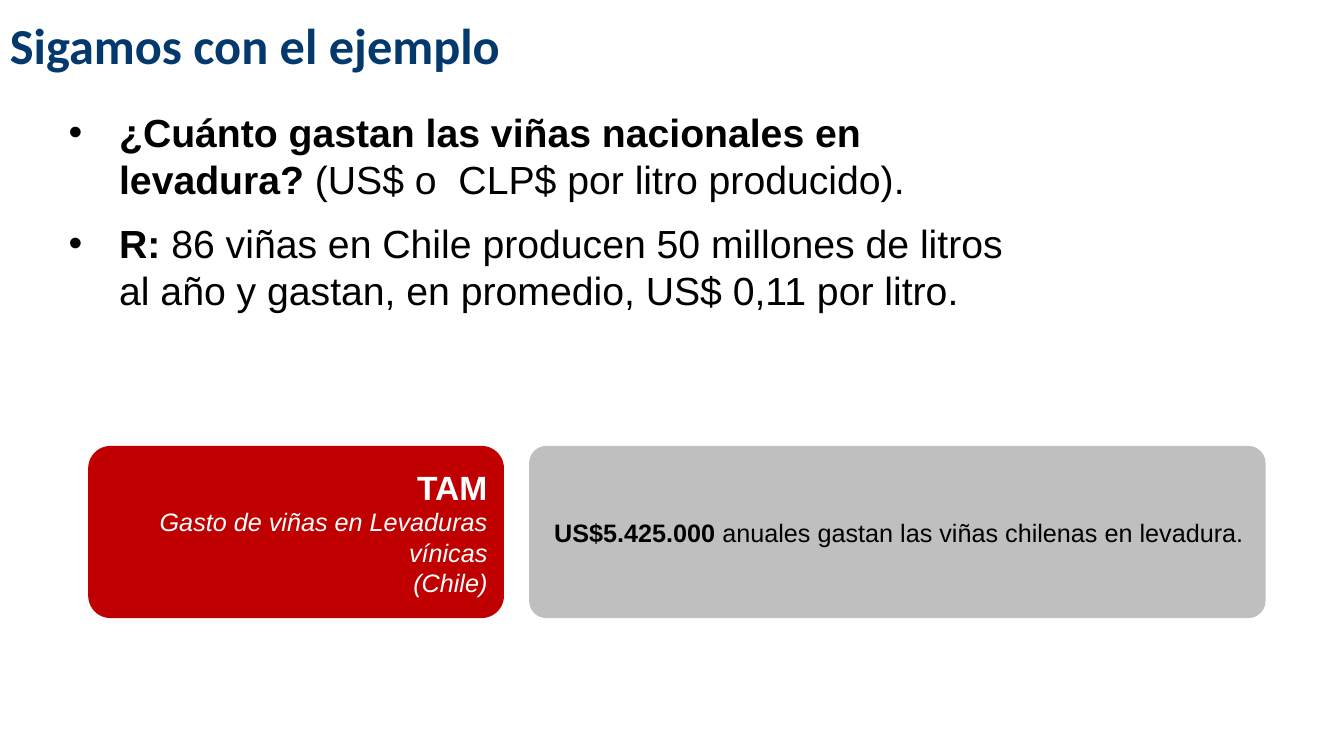
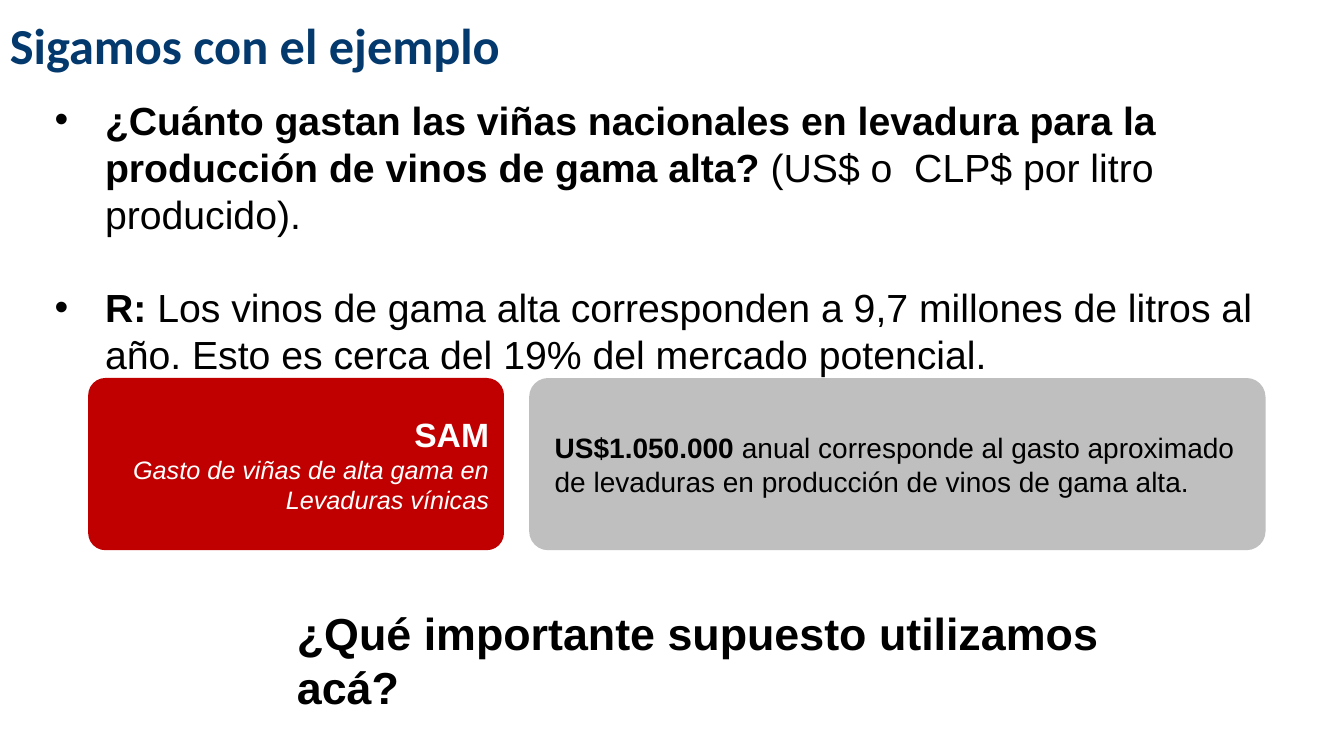
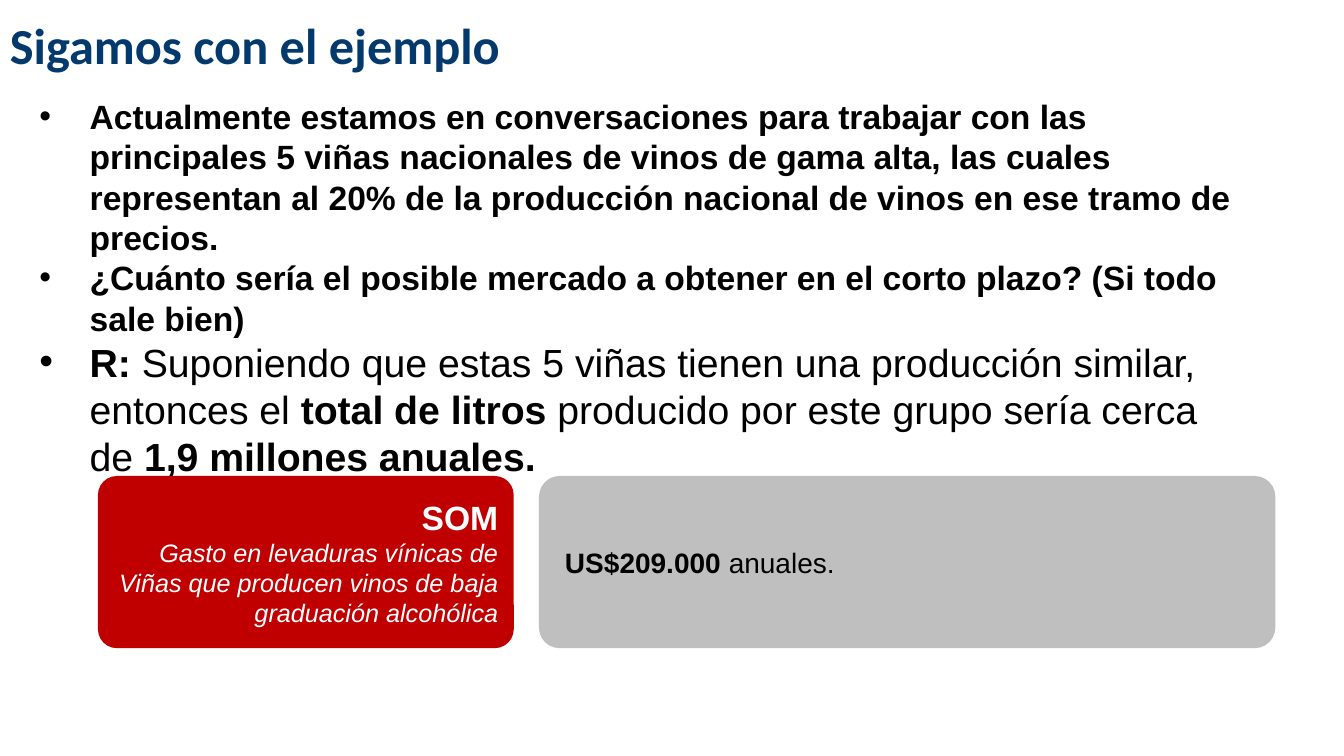
from lxml import etree
from pptx import Presentation
from pptx.dml.color import RGBColor
from pptx.enum.shapes import MSO_SHAPE
from pptx.enum.text import MSO_ANCHOR, MSO_AUTO_SIZE, PP_ALIGN
from pptx.oxml.ns import qn
from pptx.util import Pt

NAVY = RGBColor(0x03, 0x39, 0x6C)
BLACK = RGBColor(0, 0, 0)
WHITE = RGBColor(0xFF, 0xFF, 0xFF)
RED = RGBColor(0xC0, 0, 0)
GRAY = RGBColor(0xBF, 0xBF, 0xBF)
ROUND = MSO_SHAPE.ROUNDED_RECTANGLE
MIDDLE = MSO_ANCHOR.MIDDLE
GROW = MSO_AUTO_SIZE.SHAPE_TO_FIT_TEXT
LEFT, RIGHT = PP_ALIGN.LEFT, PP_ALIGN.RIGHT
PLAIN, BOLD, ITALIC = "plain", "bold", "italic"

TITLE = "Sigamos con el ejemplo"
CARD_H, TERM_W, FACT_W = 123, 297, 526
STEP = 315  # from the left of the red card to the left of the gray one

# body: left, top, width, height; gap: space between its points
# cards: left, top; term and fact: corner radius, paragraphs
SLIDES = [
    {
        "body": (42, 74, 694, 155), "gap": 12,
        "points": [
            [("¿Cuánto gastan las viñas nacionales en levadura? ", 28, BOLD),
             ("(US$ o  CLP$ por litro producido).", 28, PLAIN)],
            [("R: ", 28, BOLD),
             ("86 viñas en Chile producen 50 millones de litros al año y "
              "gastan, en promedio, US$ 0,11 por litro.", 28, PLAIN)],
        ],
        "cards": (63, 318.5),
        "term": (0.13, [
            [("TAM", 24, BOLD)],
            [("Gasto de viñas en Levaduras vínicas", 18, ITALIC)],
            [("(Chile)", 18, ITALIC)],
        ]),
        "fact": (0.1, [
            [("US$5.425.000 ", 18, BOLD),
             ("anuales gastan las viñas chilenas en levadura.", 18, PLAIN)],
        ]),
    },
    {
        "body": (32, 65, 870, 177), "gap": 33,
        "points": [
            [("¿Cuánto gastan las viñas nacionales en levadura para la "
              "producción de vinos de gama alta? ", 28, BOLD),
             ("(US$ o  CLP$ por litro producido).", 28, PLAIN)],
            [("R: ", 28, BOLD),
             ("Los vinos de gama alta corresponden a 9,7 millones de litros "
              "al año. Esto es cerca del 19% del mercado potencial.",
              28, PLAIN)],
        ],
        "cards": (63, 270),
        "term": (0.1, [
            [("SAM", 24, BOLD)],
            [("Gasto de viñas de alta gama en Levaduras vínicas",
              18, ITALIC)],
        ]),
        "fact": (0.11, [
            [("US$1.050.000 ", 20, BOLD),
             ("anual corresponde al gasto aproximado de levaduras en "
              "producción de vinos de gama alta.", 20, PLAIN)],
        ]),
        "ask": "¿Qué importante supuesto utilizamos acá?",
    },
    {
        "body": (21, 65, 870, 225), "gap": 0,
        "points": [
            [("Actualmente estamos en conversaciones para trabajar con las "
              "principales 5 viñas nacionales de vinos de gama alta, las "
              "cuales representan al 20% de la producción nacional de vinos "
              "en ese tramo de precios.", 24, BOLD)],
            [("¿Cuánto sería el posible mercado a obtener en el corto plazo? "
              "(Si todo sale bien)", 24, BOLD)],
            [("R: ", 28, BOLD),
             ("Suponiendo que estas 5 viñas tienen una producción similar, "
              "entonces el ", 28, PLAIN),
             ("total de litros ", 28, BOLD),
             ("producido por este grupo sería cerca de ", 28, PLAIN),
             ("1,9 millones anuales.", 28, BOLD)],
        ],
        "cards": (70, 340),
        "term": (0.11, [
            [("SOM", 24, BOLD)],
            [("Gasto en levaduras vínicas de Viñas que producen vinos de "
              "baja graduación alcohólica", 18, ITALIC)],
        ]),
        "fact": (0.12, [
            [("US$209.000", 20, BOLD), (" anuales.", 20, PLAIN)],
        ]),
    },
]


def write(frame, paras, color=BLACK, font="Arial", align=LEFT, inset=0,
          bullet=False, gap=0):
    """Fill a text frame with paragraphs, each a list of (text, size, style)."""
    frame.word_wrap = True
    for num, runs in enumerate(paras):
        para = frame.add_paragraph() if num else frame.paragraphs[0]
        para.alignment = align
        para.space_after = Pt(gap)
        props = para._p.get_or_add_pPr()
        props.set("marL", str(Pt(inset)))
        if bullet:
            props.set("indent", str(-Pt(inset)))
            etree.SubElement(props, qn("a:buFont"), typeface="Arial")
            etree.SubElement(props, qn("a:buChar"), char="•")
        for text, size, style in runs:
            run = para.add_run()
            run.text = text
            run.font.name = font
            run.font.size = Pt(size)
            run.font.bold = style == BOLD
            run.font.italic = style == ITALIC
            run.font.color.rgb = color


def add_text(slide, left, top, width, height, paras, **style):
    box = slide.shapes.add_textbox(Pt(left), Pt(top), Pt(width), Pt(height))
    write(box.text_frame, paras, **style)
    box.text_frame.auto_size = GROW


deck = Presentation()
deck.slide_width, deck.slide_height = Pt(960), Pt(540)

for item in SLIDES:
    slide = deck.slides.add_slide(deck.slide_layouts[6])
    add_text(slide, 0, 6.5, 627, 51, [[(TITLE, 36, BOLD)]],
             color=NAVY, font="Calibri")
    add_text(slide, *item["body"], item["points"],
             inset=36, bullet=True, gap=item["gap"])

    left, top = item["cards"]
    for key, x, width, fill, style in [
        ("fact", left + STEP, FACT_W, GRAY, {"inset": 7.2}),
        ("term", left, TERM_W, RED, {"color": WHITE, "align": RIGHT}),
    ]:
        radius, paras = item[key]
        card = slide.shapes.add_shape(ROUND, Pt(x), Pt(top), Pt(width),
                                      Pt(CARD_H))
        card.adjustments[0] = radius
        card.shadow.inherit = False
        card.fill.solid()
        card.fill.fore_color.rgb = fill
        card.line.fill.background()
        card.text_frame.vertical_anchor = MIDDLE
        write(card.text_frame, paras, **style)

    if "ask" in item:
        add_text(slide, 205, 429, 598, 46, [[(item["ask"], 32, BOLD)]])

deck.save("out.pptx")
